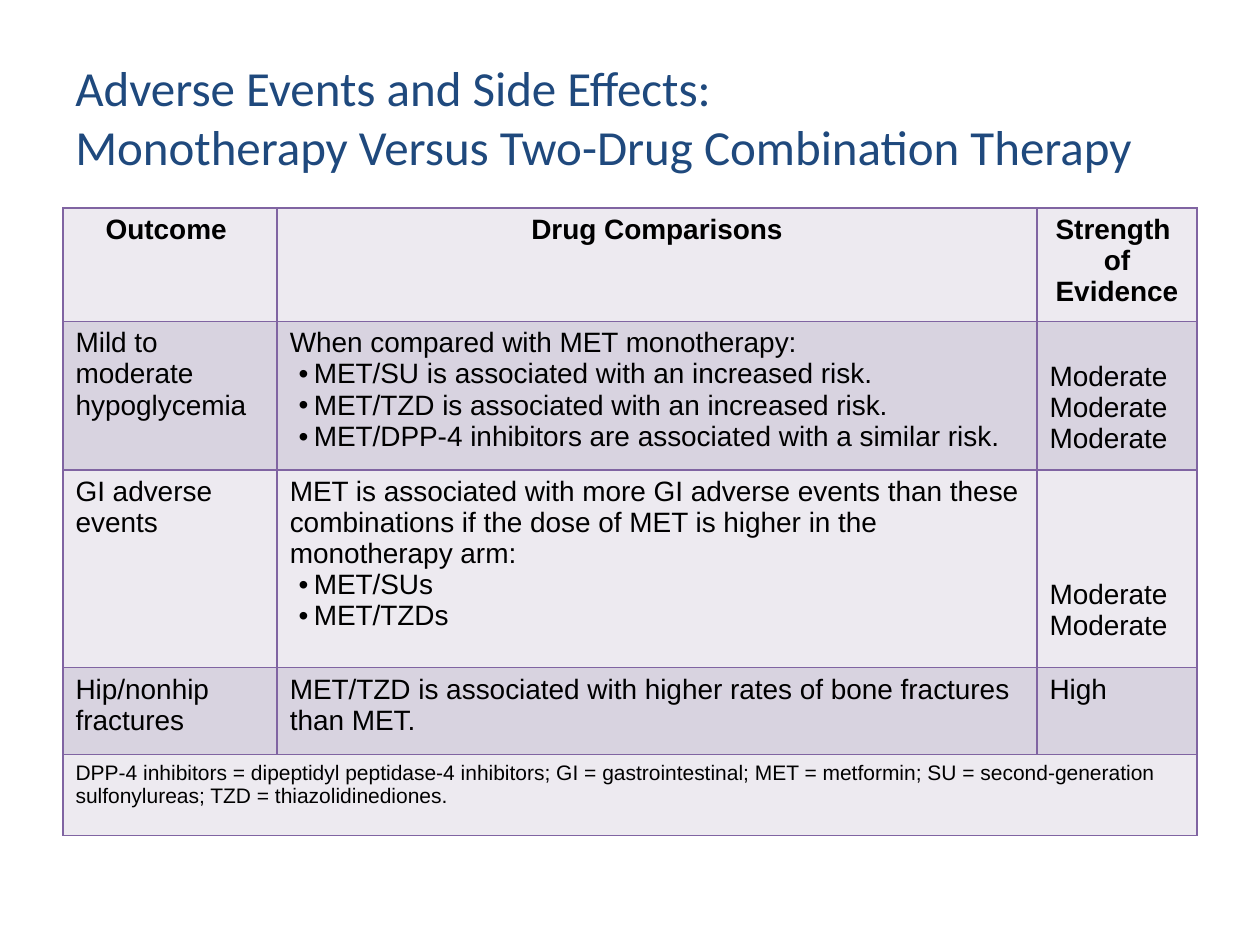
from lxml import etree
from pptx import Presentation
from pptx import util as u
from pptx.dml.color import RGBColor
from pptx.enum import text
from pptx.oxml import ns

COLORS = {"title": "1F497D", "body": "000000", "border": "8064A2",
          "light": "EDEAF0", "dark": "D8D3E0"}
COLUMN_WIDTHS = [1.7, 6.03, 1.27]
ROW_HEIGHTS = [0.9, 1.18, 1.57, 0.69, 0.64]
BULLET = "• "
HEADER = ["Outcome ", "Drug Comparisons", "Strength \vof Evidence"]
OUTCOMES = [
    ["Mild to moderate\vhypoglycemia",
     "When compared with MET monotherapy:\n"
     "• MET/SU is associated with an increased risk.\n"
     "• MET/TZD is associated with an increased risk.\n"
     "• MET/DPP-4 inhibitors are associated with a similar risk.",
     "Moderate\nModerate\nModerate"],
    ["GI adverse events",
     "MET is associated with more GI adverse events than these combinations "
     "if the dose of MET is higher in the monotherapy arm:\n"
     "• MET/SUs\n• MET/TZDs",
     "Moderate\nModerate"],
    ["Hip/nonhip \vfractures",
     "MET/TZD is associated with higher rates of bone fractures than MET.",
     "High"],
]
ABBREVIATIONS = ("DPP-4 inhibitors = dipeptidyl peptidase-4 inhibitors; "
                 "GI = gastrointestinal; MET = metformin; "
                 "SU = second-generation sulfonylureas; "
                 "TZD = thiazolidinediones.")
# Top margins that line the ratings up with the bullets beside them
RATING_TOPS = {1: 0.32, 2: 0.87}


def style_runs(paragraph, font_name, size, color, bold=False):
    for run in paragraph.runs:
        run.font.name = font_name
        run.font.size = u.Pt(size)
        run.font.bold = bold
        run.font.color.rgb = RGBColor.from_string(COLORS[color])


def add_bullet(paragraph):
    properties = paragraph._p.get_or_add_pPr()
    properties.set("marL", str(u.Inches(0.19)))
    properties.set("indent", str(u.Inches(-0.12)))
    etree.SubElement(properties, ns.qn("a:buFont"), typeface="Arial")
    etree.SubElement(properties, ns.qn("a:buChar"), char=BULLET.strip())


def set_borders(cell):
    """Draw all four edges; they must come before the fill in the cell."""
    properties = cell._tc.get_or_add_tcPr()
    for position, edge in enumerate(("a:lnL", "a:lnR", "a:lnT", "a:lnB")):
        line = etree.Element(ns.qn(edge), w=str(u.Pt(1)))
        fill = etree.SubElement(line, ns.qn("a:solidFill"))
        etree.SubElement(fill, ns.qn("a:srgbClr"), val=COLORS["border"])
        properties.insert(position, line)


def fill_cell(cell, content, size=16, header=False):
    cell.text_frame.text = content
    for paragraph in cell.text_frame.paragraphs:
        if paragraph.text.startswith(BULLET):
            paragraph.text = paragraph.text.removeprefix(BULLET)
            add_bullet(paragraph)
        if header:
            paragraph.alignment = text.PP_ALIGN.CENTER
        style_runs(paragraph, "Arial", size, "body", header)


def add_title(slide, left, top, width, height):
    box = slide.shapes.add_textbox(left, top, width, height)
    frame = box.text_frame
    frame.word_wrap = True
    frame.vertical_anchor = text.MSO_ANCHOR.MIDDLE
    paragraph = frame.paragraphs[0]
    paragraph.text = ("Adverse Events and Side Effects: \v"
                      "Monotherapy Versus Two-Drug Combination Therapy")
    style_runs(paragraph, "Calibri", 28, "title")


def add_evidence_table(slide, left, top, width, height):
    table = slide.shapes.add_table(len(ROW_HEIGHTS), len(COLUMN_WIDTHS),
                                   left, top, width, height).table
    table.first_row = table.horz_banding = False
    for column, column_width in zip(table.columns, COLUMN_WIDTHS):
        column.width = u.Inches(column_width)
    for index, (row, row_height) in enumerate(zip(table.rows, ROW_HEIGHTS)):
        row.height = u.Inches(row_height)
        for cell in row.cells:
            cell.fill.solid()
            shade = COLORS["dark" if index % 2 else "light"]
            cell.fill.fore_color.rgb = RGBColor.from_string(shade)
            set_borders(cell)

    for row_index, contents in enumerate([HEADER] + OUTCOMES):
        for column_index, content in enumerate(contents):
            fill_cell(table.cell(row_index, column_index), content,
                      header=row_index == 0)
    for row_index, margin in RATING_TOPS.items():
        table.cell(row_index, 2).margin_top = u.Inches(margin)

    last_row = len(ROW_HEIGHTS) - 1
    footnote = table.cell(last_row, 0)
    footnote.merge(table.cell(last_row, len(COLUMN_WIDTHS) - 1))
    fill_cell(footnote, ABBREVIATIONS, size=12)


def main():
    presentation = Presentation()
    presentation.slide_width = u.Inches(10)
    presentation.slide_height = u.Inches(7.5)
    slide = presentation.slides.add_slide(presentation.slide_layouts[6])
    left, width = u.Inches(0.5), u.Inches(9)
    add_title(slide, left, u.Inches(0.3), width, u.Inches(1.25))
    add_evidence_table(slide, left, u.Inches(1.65), width,
                       u.Inches(sum(ROW_HEIGHTS)))
    presentation.save("out.pptx")


if __name__ == "__main__":
    main()
